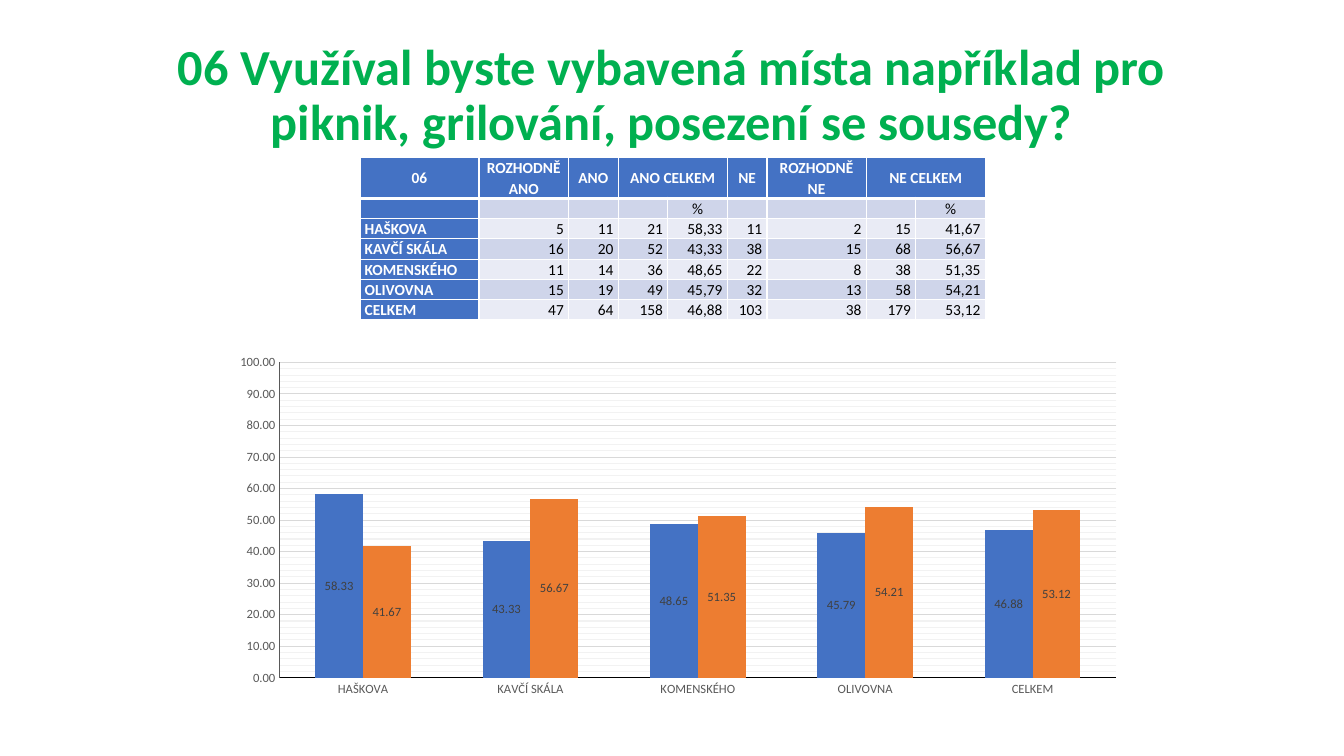
from lxml import etree
from pptx import Presentation
from pptx.chart.data import CategoryChartData
from pptx.dml.color import RGBColor
from pptx.enum.chart import XL_CHART_TYPE, XL_LABEL_POSITION, XL_TICK_MARK
from pptx.enum.text import MSO_ANCHOR, PP_ALIGN
from pptx.oxml import parse_xml
from pptx.oxml.ns import nsdecls, qn
from pptx.util import Cm, Pt

COLUMNS = XL_CHART_TYPE.COLUMN_CLUSTERED
LABEL_CENTER = XL_LABEL_POSITION.CENTER
NO_TICK = XL_TICK_MARK.NONE
MIDDLE, BOTTOM = MSO_ANCHOR.MIDDLE, MSO_ANCHOR.BOTTOM
LEFT, CENTER, RIGHT = PP_ALIGN.LEFT, PP_ALIGN.CENTER, PP_ALIGN.RIGHT

FONT = "Calibri"
GREEN = RGBColor(0x00, 0xB0, 0x50)
BLUE = RGBColor(0x44, 0x72, 0xC4)
ORANGE = RGBColor(0xED, 0x7D, 0x31)
BAND_DARK = RGBColor(0xCF, 0xD5, 0xEA)
BAND_LIGHT = RGBColor(0xE9, 0xEB, 0xF5)
WHITE = RGBColor(0xFF, 0xFF, 0xFF)
BLACK = RGBColor(0x00, 0x00, 0x00)
AXIS_GRAY = RGBColor(0x59, 0x59, 0x59)
LABEL_GRAY = RGBColor(0x40, 0x40, 0x40)
GRID_MAJOR = RGBColor(0xD9, 0xD9, 0xD9)
GRID_MINOR = RGBColor(0xF2, 0xF2, 0xF2)

TITLE = ("06 Využíval byste vybavená místa například pro piknik, "
         "grilování, posezení se sousedy?")
HEADER = ["06", "ROZHODNĚ ANO", "ANO", "ANO CELKEM", "", "NE",
          "ROZHODNĚ NE", "NE CELKEM", ""]
UNITS = ["", "", "", "", "%", "", "", "", "%"]
# Street, surely yes, yes, yes total, yes %, no, surely no, no total, no %
ANSWERS = [
    ("HAŠKOVA", 5, 11, 21, 58.33, 11, 2, 15, 41.67),
    ("KAVČÍ SKÁLA", 16, 20, 52, 43.33, 38, 15, 68, 56.67),
    ("KOMENSKÉHO", 11, 14, 36, 48.65, 22, 8, 38, 51.35),
    ("OLIVOVNA", 15, 19, 49, 45.79, 32, 13, 58, 54.21),
    ("CELKEM", 47, 64, 158, 46.88, 103, 38, 179, 53.12),
]
YES_SHARE, NO_SHARE = 4, 8
MERGED_HEADERS = (3, 7)
COLUMN_WIDTHS = [3, 2.26, 1.25, 1.25, 1.5, 1, 2.5, 1.25, 1.75]
HEADER_HEIGHT, ROW_HEIGHT = 1.03, 0.51


def style_font(font, size, color, bold=False):
    font.name, font.size, font.bold = FONT, Pt(size), bold
    font.color.rgb = color


def add_title(page):
    box = page.shapes.add_textbox(Cm(2.33), Cm(0.91), Cm(29.21), Cm(3.05))
    frame = box.text_frame
    frame.word_wrap = True
    frame.vertical_anchor = MIDDLE
    para = frame.paragraphs[0]
    para.alignment, para.line_spacing = CENTER, 0.9
    span = para.add_run()
    span.text = TITLE
    style_font(span.font, 36, GREEN, True)


def set_borders(cell, top, bottom):
    """Draw white cell edges; top and bottom are widths in points."""
    properties = cell._tc.get_or_add_tcPr()
    for side, width in (("L", 1), ("R", 1), ("T", top), ("B", bottom)):
        properties.append(parse_xml(
            f'<a:ln{side} {nsdecls("a")} w="{Pt(width)}"><a:solidFill>'
            f'<a:srgbClr val="{WHITE}"/></a:solidFill></a:ln{side}>'))


def fill_cell(cell, text, row, column):
    heading = row == 0 or column == 0
    set_borders(cell, 3 if row == 1 else 1, 3 if row == 0 else 1)
    cell.fill.solid()
    band = BAND_DARK if row % 2 else BAND_LIGHT
    cell.fill.fore_color.rgb = BLUE if heading else band
    cell.margin_left = cell.margin_right = Cm(0.12)
    cell.margin_top = cell.margin_bottom = 0
    cell.vertical_anchor = MIDDLE if row < 2 else BOTTOM
    para = cell.text_frame.paragraphs[0]
    para.line_spacing = 1.07
    if row < 2:
        para.alignment = CENTER
    else:
        para.alignment = RIGHT if column else LEFT
    if text:
        span = para.add_run()
        span.text = text
        style_font(span.font, 11, WHITE if heading else BLACK, heading)
    else:
        # Keeps an empty cell from stretching its row
        etree.SubElement(para._p, qn("a:endParaRPr"), sz="1100")


def add_answer_table(page):
    rows = [HEADER, UNITS]
    rows += [[str(value).replace(".", ",") for value in answer] for answer in ANSWERS]
    heights = [HEADER_HEIGHT] + [ROW_HEIGHT] * (len(rows) - 1)
    table = page.shapes.add_table(
        len(rows), len(HEADER), Cm(9.07), Cm(3.97),
        Cm(sum(COLUMN_WIDTHS)), Cm(sum(heights))).table
    for column, width in zip(table.columns, COLUMN_WIDTHS):
        column.width = Cm(width)
    for row, height in zip(table.rows, heights):
        row.height = Cm(height)
    for r, texts in enumerate(rows):
        for c, text in enumerate(texts):
            fill_cell(table.cell(r, c), text, r, c)
    for c in MERGED_HEADERS:
        table.cell(0, c).merge(table.cell(0, c + 1))


def style_line(line, color):
    line.color.rgb = color
    line.width = Pt(0.75)


def style_axis(axis, line_color):
    axis.major_tick_mark = axis.minor_tick_mark = NO_TICK
    style_font(axis.tick_labels.font, 9, AXIS_GRAY)
    style_line(axis.format.line, line_color)


def add_minor_gridlines(axis, color):
    axis.has_minor_gridlines = True
    axis._element.find(qn("c:minorGridlines")).append(parse_xml(
        f'<c:spPr {nsdecls("c", "a")}><a:ln w="{Pt(0.75)}"><a:solidFill>'
        f'<a:srgbClr val="{color}"/></a:solidFill></a:ln></c:spPr>'))


def set_plot_area(chart, x, y, width, height):
    """Place the inner plot area by fractions of the chart."""
    area = chart._chartSpace.chart.plotArea
    for old in area.findall(qn("c:layout")):
        area.remove(old)
    places = "".join(f'<c:{name} val="{value}"/>' for name, value in
                     (("x", x), ("y", y), ("w", width), ("h", height)))
    area.insert(0, parse_xml(
        f'<c:layout {nsdecls("c")}><c:manualLayout><c:layoutTarget val="inner"/>'
        f'<c:xMode val="edge"/><c:yMode val="edge"/>{places}'
        '</c:manualLayout></c:layout>'))


def add_share_chart(page):
    data = CategoryChartData(number_format="0.00")
    data.categories = [answer[0] for answer in ANSWERS]
    for name, share in (("Series 1", YES_SHARE), ("Series 2", NO_SHARE)):
        data.add_series(name, [answer[share] for answer in ANSWERS])
    chart = page.shapes.add_chart(
        COLUMNS, Cm(4.37), Cm(8.43), Cm(26.7), Cm(10.06), data).chart
    chart.has_legend = chart.has_title = False
    style_font(chart.font, 10, BLACK)
    set_plot_area(chart, 0.1, 0.07, 0.79, 0.79)

    # Axes and gridlines
    style_axis(chart.category_axis, BLACK)
    values = chart.value_axis
    style_axis(values, AXIS_GRAY)
    values.minimum_scale, values.maximum_scale = 0, 100
    values.major_unit, values.minor_unit = 10, 2
    values.tick_labels.number_format = "0.00"
    values.tick_labels.number_format_is_linked = False
    values.has_major_gridlines = True
    style_line(values.major_gridlines.format.line, GRID_MAJOR)
    add_minor_gridlines(values, GRID_MINOR)

    # Bars and their labels
    plot = chart.plots[0]
    plot.gap_width, plot.overlap, plot.vary_by_categories = 150, 0, False
    for series, color in zip(plot.series, (BLUE, ORANGE)):
        series.format.fill.solid()
        series.format.fill.fore_color.rgb = color
        labels = series.data_labels
        labels.show_value = True
        labels.position = LABEL_CENTER
        labels.number_format = "0.00"
        labels.number_format_is_linked = False
        style_font(labels.font, 9, LABEL_GRAY)


def main():
    deck = Presentation()
    deck.slide_width, deck.slide_height = Cm(33.87), Cm(19.05)
    page = deck.slides.add_slide(deck.slide_layouts[6])
    add_title(page)
    add_answer_table(page)
    add_share_chart(page)
    deck.save("out.pptx")


if __name__ == "__main__":
    main()
